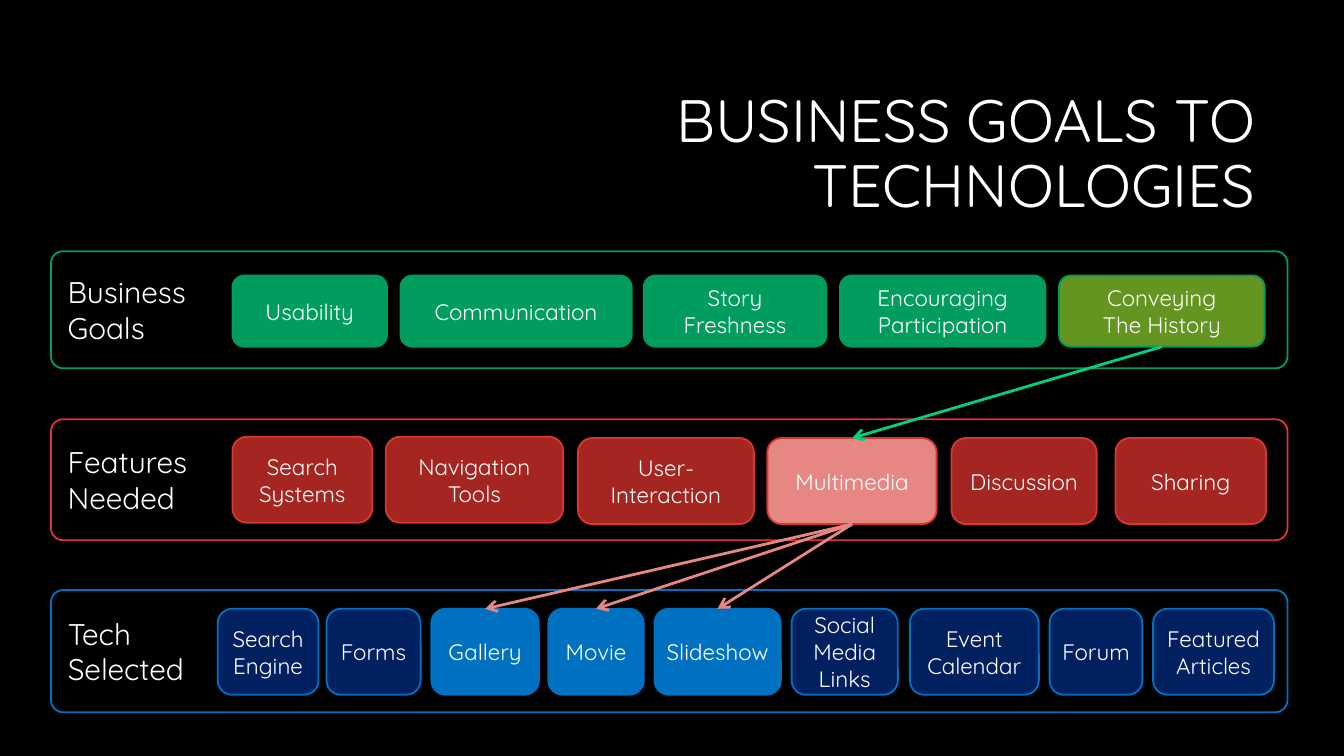
from dataclasses import dataclass

from lxml.etree import SubElement
from pptx import Presentation
from pptx.dml.color import RGBColor
from pptx.enum.shapes import MSO_CONNECTOR, MSO_SHAPE
from pptx.enum.text import MSO_ANCHOR, PP_ALIGN
from pptx.oxml.ns import qn
from pptx.shapes.autoshape import Shape
from pptx.slide import Slide
from pptx.util import Emu, Pt

PX = 9144  # EMU per px, 100 px to the inch
FONT = "Quicksand"
COLORS = {
    "black": "000000", "white": "FFFFFF",
    "green": "019D5E", "green_line": "019B5C", "olive": "639520", "mint": "01D17D",
    "red": "A52621", "red_line": "D63731", "pink": "E68783",
    "navy": "002060", "blue": "0070C0",
}


@dataclass
class Box:
    text: str
    left: int
    width: int
    fill: str = ""  # empty: the fill of its band
    drop: int = 0   # px below the top of the row


@dataclass
class Band:
    label: str
    top: int
    height: int
    box_top: int
    box_height: int
    fill: str
    line: str
    side_inset: int
    boxes: list[Box]


@dataclass
class Arrow:
    start: str
    end: str
    color: str


BANDS = [
    Band("Business\nGoals", 187, 87, 205, 53, "green", "green_line", 10, [
        Box("Usability", 173, 115),
        Box("Communication", 298, 172),
        Box("Story\nFreshness", 479, 136),
        Box("Encouraging Participation", 625, 153),
        Box("Conveying\nThe History", 788, 153, "olive"),
    ]),
    Band("Features\nNeeded", 312, 90, 325, 64, "red", "red_line", 10, [
        Box("Search\nSystems", 173, 104),
        Box("Navigation\nTools", 287, 132),
        Box("User-Interaction", 430, 131, drop=1),
        Box("Multimedia", 571, 126, "pink", 1),
        Box("Discussion", 708, 108, drop=1),
        Box("Sharing", 830, 112, drop=1),
    ]),
    Band("Tech\nSelected", 439, 91, 453, 64, "navy", "blue", 0, [
        Box("Search Engine", 162, 75),
        Box("Forms", 243, 70),
        Box("Gallery", 321, 80, "blue"),
        Box("Movie", 408, 71, "blue"),
        Box("Slideshow", 487, 94, "blue"),
        Box("Social Media\nLinks", 589, 79),
        Box("Event\nCalendar", 677, 96),
        Box("Forum", 781, 69),
        Box("Featured\nArticles", 858, 90),
    ]),
]
ARROWS = [
    Arrow("Multimedia", "Gallery", "pink"),
    Arrow("Multimedia", "Movie", "pink"),
    Arrow("Multimedia", "Slideshow", "pink"),
    Arrow("Conveying\nThe History", "Multimedia", "mint"),
]


def px(n: int) -> Emu:
    return Emu(n * PX)


def rgb(name: str) -> RGBColor:
    return RGBColor.from_string(COLORS[name])


def set_text(sp: Shape, text: str, size: int, align: PP_ALIGN,
             side_inset: int = 10, spacing: float = 1.0) -> None:
    tf = sp.text_frame
    frame = {"word_wrap": True, "vertical_anchor": MSO_ANCHOR.MIDDLE,
             "margin_left": px(side_inset), "margin_right": px(side_inset),
             "margin_top": px(5), "margin_bottom": px(5)}
    for name, value in frame.items():
        setattr(tf, name, value)
    tf.text = text
    for p in tf.paragraphs:
        p.alignment, p.line_spacing = align, spacing
        for r in p.runs:
            for name, value in {"name": FONT, "size": Pt(size)}.items():
                setattr(r.font, name, value)
            r.font.color.rgb = rgb("white")


def add_round_rect(s: Slide, left: int, top: int, width: int, height: int,
                   line: str, fill: str = "") -> Shape:
    sp = s.shapes.add_shape(MSO_SHAPE.ROUNDED_RECTANGLE,
                            px(left), px(top), px(width), px(height))
    sp.shadow.inherit = False
    if fill:
        sp.fill.solid()
        sp.fill.fore_color.rgb = rgb(fill)
    else:
        sp.fill.background()
    sp.line.color.rgb = rgb(line)
    sp.line.width = Pt(1)
    return sp


def add_band(s: Slide, band: Band) -> dict[str, Shape]:
    """Draw a band and return its boxes by their text."""
    frame = add_round_rect(s, 38, band.top, 920, band.height, band.line)
    frame.adjustments[0] = 0.1
    set_text(frame, band.label, 16, PP_ALIGN.LEFT)
    shapes = {}
    for box in band.boxes:
        sp = add_round_rect(s, box.left, band.box_top + box.drop, box.width,
                            band.box_height, band.line, box.fill or band.fill)
        set_text(sp, box.text, 12, PP_ALIGN.CENTER, band.side_inset)
        shapes[box.text] = sp
    return shapes


def add_arrow(s: Slide, start: Shape, end: Shape, color: str) -> None:
    c = s.shapes.add_connector(MSO_CONNECTOR.STRAIGHT, 0, 0, 0, 0)
    c.begin_connect(start, 2)
    c.end_connect(end, 0)
    c.line.color.rgb = rgb(color)
    c.line.width = Pt(1.5)
    sp_pr = c._element.spPr
    SubElement(sp_pr.find(qn("a:ln")), qn("a:tailEnd"), type="arrow")
    SubElement(sp_pr, qn("a:effectLst"))


def main() -> None:
    prs = Presentation()
    prs.slide_width = px(1000)
    prs.slide_height = Emu(prs.slide_width * 9 // 16)
    s = prs.slides.add_slide(prs.slide_layouts[6])
    s.background.fill.solid()
    s.background.fill.fore_color.rgb = rgb("black")

    title = s.shapes.add_textbox(px(238), px(63), px(706), px(106))
    set_text(title, "BUSINESS GOALS TO TECHNOLOGIES", 32, PP_ALIGN.RIGHT, spacing=0.9)

    shapes = {}
    for band in BANDS:
        shapes.update(add_band(s, band))
    for arrow in ARROWS:
        add_arrow(s, shapes[arrow.start], shapes[arrow.end], arrow.color)
    prs.save("out.pptx")


if __name__ == "__main__":
    main()
